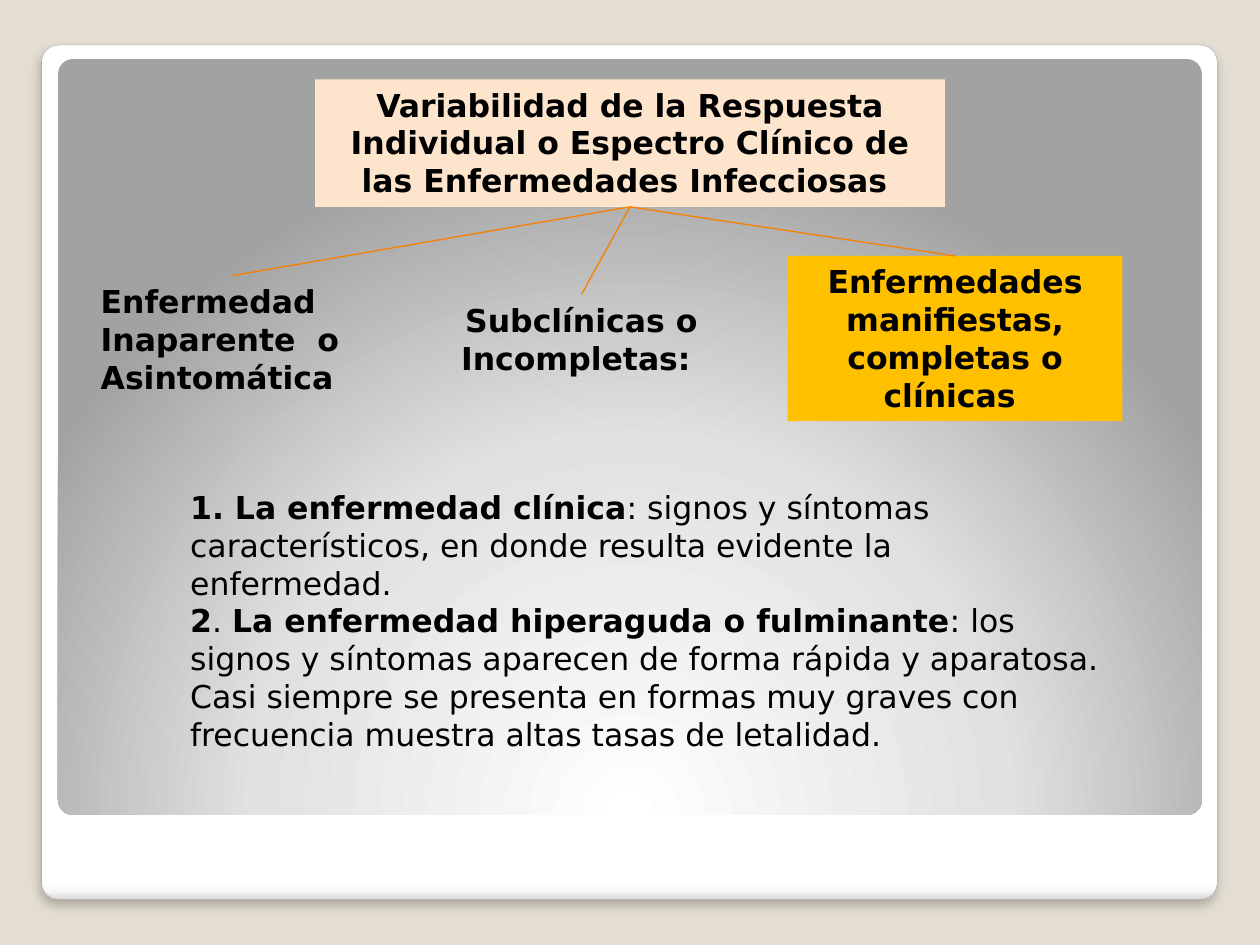
from lxml import etree
from pptx import Presentation
from pptx import util as u
from pptx.dml.color import RGBColor
from pptx.enum import shapes, text
from pptx.oxml import ns

# Content: boxes are left, top, width, height in cm
FONT, SIZE = "DejaVu Sans", 18
TITLE = ("Variabilidad de la Respuesta Individual o Espectro Clínico de "
         "las Enfermedades Infecciosas ")
TITLE_BOX = (6.35, 1.6, 12.7, 2.57)
BRANCHES = [  # words, box, fill, centred
    ("Enfermedad Inaparente  o Asintomática", (1.78, 5.56, 5.77, 2.57), None, False),
    ("Subclínicas o Incompletas: ", (8.94, 5.94, 5.56, 1.8), None, True),
    ("Enfermedades manifiestas, completas o clínicas ",
     (15.88, 5.16, 6.75, 3.33), "FFC000", True),
]
BODY_BOX = (3.58, 9.71, 18.85, 5.6)
BODY = [  # paragraphs of (words, bold)
    [("1. La enfermedad clínica", True),
     (": signos y síntomas característicos, en donde resulta evidente la "
      "enfermedad.", False)],
    [("2", True), (". ", False),
     ("La enfermedad hiperaguda o fulminante", True),
     (": los signos y síntomas aparecen de forma rápida y aparatosa. Casi siempre "
      "se presenta en formas muy graves con frecuencia muestra altas tasas de "
      "letalidad.", False)],
]
CARD_BOX = (0.84, 0.91, 23.7, 17.22)
CARD_STOPS = [(0, "FFFFFF"), (98, "FFFFFF"), (99, "F7F7F7"), (100, "DADADA")]
PANEL_BOX = (1.17, 1.19, 23.06, 15.24)
PANEL_STOPS = [(0, "FFFFFF"), (55, "E1E1E1"), (100, "A2A2A2")]


def paint(fmt, color):
    """Solid colour for a fill or a line's fill."""
    fmt.solid()
    fmt.fore_color.rgb = RGBColor.from_string(color)


def add_xml(parent, tag, **attrs):
    return etree.SubElement(parent, ns.qn(tag), {k: str(v) for k, v in attrs.items()})


def place(sp, box):
    sp.left, sp.top, sp.width, sp.height = map(u.Cm, box)


def style(sp, align):
    tf = sp.text_frame
    tf.word_wrap = True
    tf.auto_size = text.MSO_AUTO_SIZE.SHAPE_TO_FIT_TEXT
    tf.vertical_anchor = text.MSO_ANCHOR.TOP
    for p in tf.paragraphs:
        p.alignment = align
        p.space_before = u.Pt(0)
        for r in p.runs:
            r.font.name, r.font.size = FONT, u.Pt(SIZE)
            r.font.color.rgb = RGBColor.from_string("000000")


def add_panel(s, box, stops, depth):
    """Rounded panel behind the text; returns it with its empty gradient shape."""
    sp = s.shapes.add_shape(shapes.MSO_SHAPE.ROUNDED_RECTANGLE, *map(u.Cm, box))
    sp.adjustments[0] = 0.02
    sp.shadow.inherit = False
    sp.line.fill.background()
    sp.fill.background()
    pr = sp._element.spPr
    grad = etree.Element(ns.qn("a:gradFill"), rotWithShape="1")
    pr.replace(pr.find(ns.qn("a:noFill")), grad)
    gs_list = add_xml(grad, "a:gsLst")
    for pos, color in stops:
        add_xml(add_xml(gs_list, "a:gs", pos=pos * 1000), "a:srgbClr", val=color)
    s.shapes._spTree.insert(2 + depth, sp._element)
    return sp, grad


def main():
    prs = Presentation()
    prs.slide_width, prs.slide_height = u.Cm(25.4), u.Cm(19.05)
    s = prs.slides.add_slide(prs.slide_layouts[1])
    paint(s.background.fill, "E3DED1")

    # Card with soft shadow, then the radial panel
    card, grad = add_panel(s, CARD_BOX, CARD_STOPS, 0)
    add_xml(grad, "a:lin", ang=5400000, scaled=0)
    paint(card.line.fill, "A4A4A4")
    card.line.width = u.Pt(0.16)
    shadow = add_xml(card._element.spPr.find(ns.qn("a:effectLst")), "a:outerShdw",
                     blurRad=u.Pt(6), dist=u.Pt(4), dir=5400000, rotWithShape=0)
    add_xml(add_xml(shadow, "a:srgbClr", val="000000"), "a:alpha", val=25000)

    panel, grad = add_panel(s, PANEL_BOX, PANEL_STOPS, 1)
    circle = add_xml(grad, "a:path", path="circle")
    add_xml(circle, "a:fillToRect", l=50000, t=175000, r=50000, b=-75000)

    # Title
    title = s.shapes.title
    place(title, TITLE_BOX)
    paint(title.fill, "FDE5CD")
    title.text_frame.text = TITLE
    style(title, text.PP_ALIGN.CENTER)
    title.text_frame.paragraphs[0].runs[0].font.bold = True

    # Branches, each joined to the title
    for words, box, fill, centred in BRANCHES:
        sp = s.shapes.add_textbox(*map(u.Cm, box))
        if fill:
            paint(sp.fill, fill)
        sp.text_frame.text = words
        style(sp, text.PP_ALIGN.CENTER if centred else text.PP_ALIGN.LEFT)
        sp.text_frame.paragraphs[0].runs[0].font.bold = True
        line = s.shapes.add_connector(shapes.MSO_CONNECTOR.STRAIGHT, 0, 0, 0, 0)
        line.begin_connect(title, 2)
        line.end_connect(sp, 0)
        paint(line.line.fill, "F97F00")
        line.line.width = u.Pt(0.75)
        add_xml(line._element.spPr, "a:effectLst")

    # Explanation, without bullets
    body = s.placeholders[1]
    place(body, BODY_BOX)
    tf = body.text_frame
    for i, parts in enumerate(BODY):
        p = tf.paragraphs[0] if i == 0 else tf.add_paragraph()
        for words, bold in parts:
            r = p.add_run()
            r.text, r.font.bold = words, bold
    style(body, text.PP_ALIGN.LEFT)
    for p in tf.paragraphs:
        pr = p._p.get_or_add_pPr()
        pr.set("marL", "0")
        pr.set("indent", "0")
        add_xml(pr, "a:buNone")

    prs.save("out.pptx")


if __name__ == "__main__":
    main()
